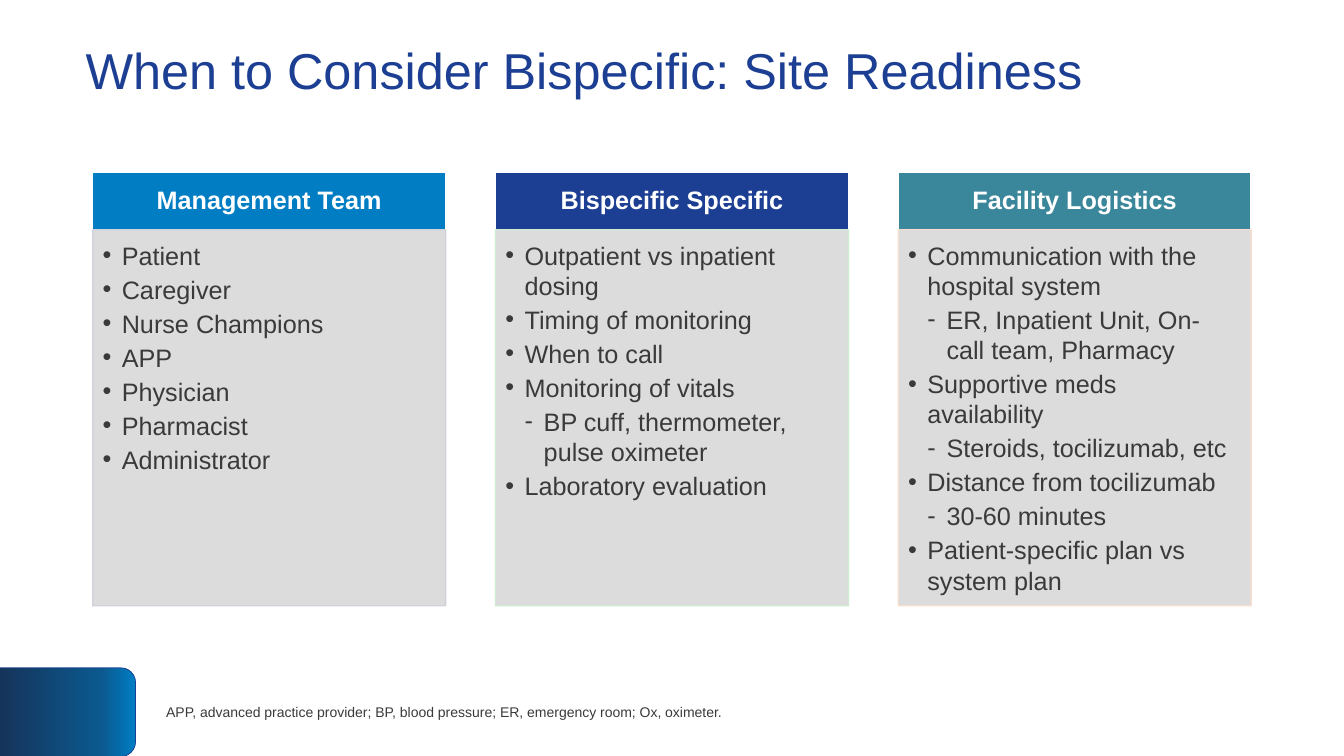
"""Build the site readiness slide with three headed lists."""
from copy import deepcopy

from lxml import etree
from pptx import Presentation
from pptx.dml.color import RGBColor
from pptx.enum.shapes import MSO_SHAPE
from pptx.enum.text import MSO_ANCHOR, PP_ALIGN
from pptx.oxml.ns import qn
from pptx.util import Inches, Pt

RECTANGLE = MSO_SHAPE.RECTANGLE
ROUNDED_TAB = MSO_SHAPE.ROUND_2_SAME_RECTANGLE
TOP, MIDDLE = MSO_ANCHOR.TOP, MSO_ANCHOR.MIDDLE
LEFT, CENTER = PP_ALIGN.LEFT, PP_ALIGN.CENTER

WHITE = RGBColor(0xFF, 0xFF, 0xFF)
NAVY = RGBColor(0x1C, 0x3F, 0x93)
BLUE = RGBColor(0x00, 0x7D, 0xC3)
TEAL = RGBColor(0x3A, 0x86, 0x9B)
INK = RGBColor(0x3A, 0x3A, 0x3A)
PANEL = RGBColor(0xD9, 0xD9, 0xD9)
LAVENDER = RGBColor(0xCD, 0xCF, 0xDC)
MINT = RGBColor(0xCB, 0xEB, 0xCF)
PEACH = RGBColor(0xF6, 0xDD, 0xCD)
TAB_GRADIENT = [
    (0, BLUE),
    (0.25, RGBColor(0x0B, 0x59, 0x8F)),
    (1, RGBColor(0x15, 0x34, 0x5A)),
]

TITLE = "When to Consider Bispecific: Site Readiness"
FOOTNOTE = ("APP, advanced practice provider; BP, blood pressure; "
            "ER, emergency room; Ox, oximeter.")
COLUMNS = [
    ("Management Team", BLUE, LAVENDER, [
        (1, "Patient"),
        (1, "Caregiver"),
        (1, "Nurse Champions"),
        (1, "APP"),
        (1, "Physician"),
        (1, "Pharmacist"),
        (1, "Administrator"),
    ]),
    ("Bispecific Specific", NAVY, MINT, [
        (1, "Outpatient vs inpatient dosing"),
        (1, "Timing of monitoring"),
        (1, "When to call"),
        (1, "Monitoring of vitals"),
        (2, "BP cuff, thermometer, pulse oximeter"),
        (1, "Laboratory evaluation"),
    ]),
    ("Facility Logistics", TEAL, PEACH, [
        (1, "Communication with the hospital system"),
        (2, "ER, Inpatient Unit, On-call team, Pharmacy"),
        (1, "Supportive meds availability"),
        (2, "Steroids, tocilizumab, etc"),
        (1, "Distance from tocilizumab"),
        (2, "30-60 minutes"),
        (1, "Patient-specific plan vs system plan"),
    ]),
]

SLIDE_WIDTH, SLIDE_HEIGHT = 13.33, 7.5
GRID_LEFT, GRID_RIGHT, GRID_TOP = 0.92, 12.41, 1.71
COLUMN_WIDTH, HEADER_HEIGHT, BODY_HEIGHT = 3.5, 0.57, 3.73
COLUMN_STEP = (GRID_RIGHT - GRID_LEFT - COLUMN_WIDTH) / (len(COLUMNS) - 1)
INDENT = 0.19
BULLETS = {1: "•", 2: "-"}
DEFAULT_INSETS = (0.1, 0.05, 0.1, 0.05)


def write_text(shape, lines, size=18, color=INK, bold=False, align=LEFT, anchor=MIDDLE,
               insets=DEFAULT_INSETS, line_spacing=1.0, space_after=0):
    """Fill a shape with (level, text) lines; level 0 has no bullet."""
    frame = shape.text_frame
    frame.word_wrap = True
    frame.vertical_anchor = anchor
    frame.margin_left, frame.margin_top, frame.margin_right, frame.margin_bottom = map(
        Inches, insets)
    for index, (level, text) in enumerate(lines):
        paragraph = frame.add_paragraph() if index else frame.paragraphs[0]
        paragraph.text = text
        paragraph.alignment = align
        paragraph.line_spacing = line_spacing
        paragraph.space_after = Pt(space_after)
        if level:
            paragraph.level = level
            properties = paragraph._p.get_or_add_pPr()
            properties.set("marL", str(Inches(level * INDENT)))
            properties.set("indent", str(-Inches(INDENT)))
            etree.SubElement(properties, qn("a:buFont"), typeface="Arial")
            etree.SubElement(properties, qn("a:buChar"), char=BULLETS[level])
        font = paragraph.font
        font.name, font.size, font.bold = "Arial", Pt(size), bold
        font.color.rgb = color


def add_box(slide, preset, place, line, line_width=1, fill=None, opacity=100):
    shape = slide.shapes.add_shape(preset, *map(Inches, place))
    shape.shadow.inherit = False
    shape.line.color.rgb = line
    shape.line.width = Pt(line_width)
    if fill is not None:
        shape.fill.solid()
        shape.fill.fore_color.rgb = fill
    if opacity < 100:
        for color in list(shape._element.spPr.iter(qn("a:srgbClr"))):
            etree.SubElement(color, qn("a:alpha"), val=str(opacity * 1000))
    return shape


def add_corner_tab(slide):
    tab = add_box(slide, ROUNDED_TAB, (0.23, 6.39, 0.88, 1.35), NAVY, line_width=0.5)
    tab.rotation = 90
    tab.fill.gradient()
    tab.fill.gradient_angle = 270
    stop_list = tab._element.spPr.find(f".//{qn('a:gsLst')}")
    stop_list.insert(1, deepcopy(stop_list[0]))
    for stop, (position, color) in zip(tab.fill.gradient_stops, TAB_GRADIENT):
        stop.position = position
        stop.color.rgb = color


def add_column(slide, index, heading, color, border, items):
    left = GRID_LEFT + index * COLUMN_STEP
    header = add_box(slide, RECTANGLE, (left, GRID_TOP, COLUMN_WIDTH, HEADER_HEIGHT),
                     WHITE, fill=color)
    write_text(header, [(0, heading)], color=WHITE, bold=True, align=CENTER,
               insets=(0.14, 0.08, 0.14, 0.08), line_spacing=0.9)
    body = add_box(slide, RECTANGLE,
                   (left, GRID_TOP + HEADER_HEIGHT, COLUMN_WIDTH, BODY_HEIGHT),
                   border, fill=PANEL, opacity=90)
    write_text(body, items, anchor=TOP, insets=(0.1, 0.1, 0.14, 0.16), space_after=2.7)


def main():
    presentation = Presentation()
    presentation.slide_width = Inches(SLIDE_WIDTH)
    presentation.slide_height = Inches(SLIDE_HEIGHT)
    slide = presentation.slides.add_slide(presentation.slide_layouts[6])
    add_corner_tab(slide)
    title = slide.shapes.add_textbox(*map(Inches, (0.75, 0, 11.5, 1.45)))
    write_text(title, [(0, TITLE)], size=36, color=NAVY, line_spacing=0.9)
    for index, column in enumerate(COLUMNS):
        add_column(slide, index, *column)
    footnote = slide.shapes.add_textbox(*map(Inches, (1.55, 6.62, 11.65, 0.88)))
    write_text(footnote, [(0, FOOTNOTE)], size=10)
    presentation.save("out.pptx")


if __name__ == "__main__":
    main()
